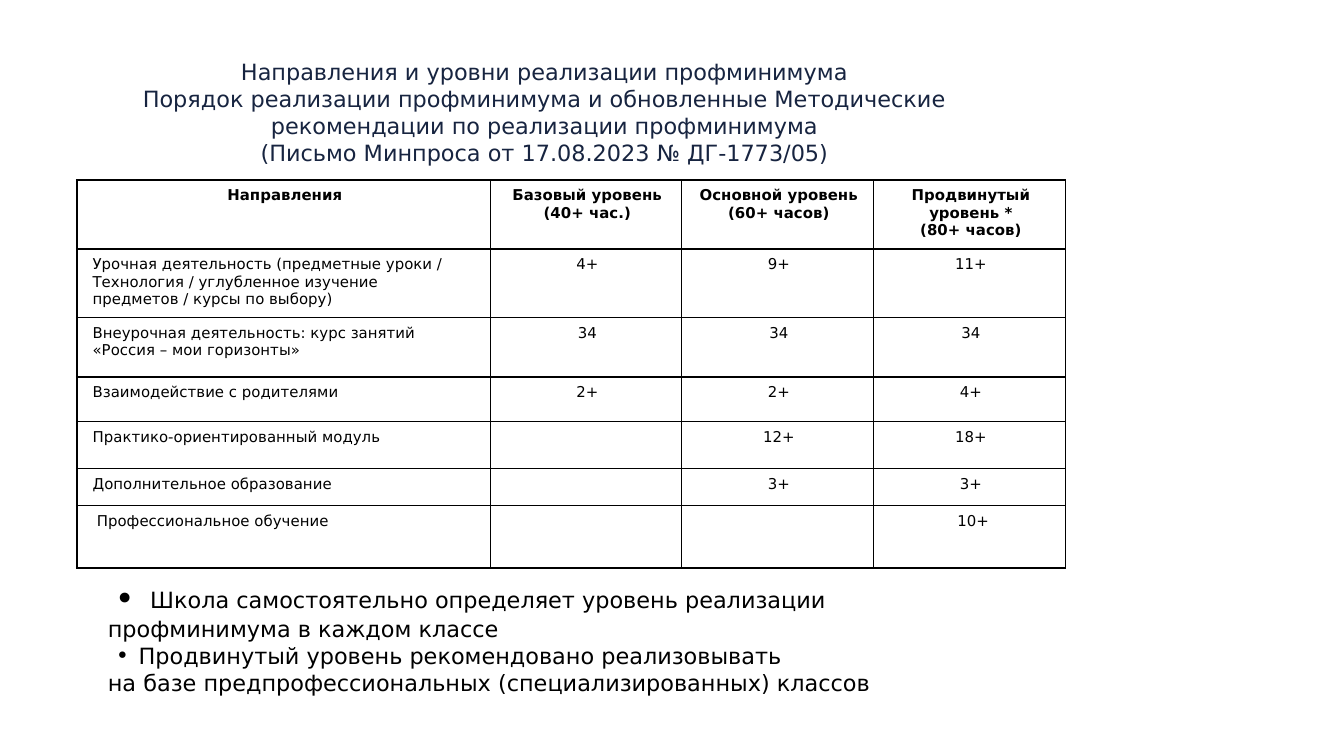
import pptx
import pptx.util
import pptx.dml.color
import pptx.enum.text
import pptx.oxml.ns
from lxml import etree

Cm = pptx.util.Cm
Pt = pptx.util.Pt
qn = pptx.oxml.ns.qn
ALIGN = pptx.enum.text.PP_ALIGN
ANCHOR = pptx.enum.text.MSO_ANCHOR

FONT = "DejaVu Sans"
COLORS = {"title": "172440", "text": "000000", "border": "000000"}

TITLE = [
    "Направления и уровни реализации профминимума",
    "Порядок реализации профминимума и обновленные Методические рекомендации по реализации профминимума",
    "(Письмо Минпроса от 17.08.2023 № ДГ-1773/05)",
]
HEADER = [
    ["Направления"],
    ["Базовый уровень", "(40+ час.)"],
    ["Основной уровень", "(60+ часов)"],
    ["Продвинутый уровень *", "(80+ часов)"],
]
ROWS = [
    ("Урочная деятельность (предметные уроки / Технология / углубленное изучение предметов / курсы по выбору)",
     "4+", "9+", "11+"),
    ("Внеурочная деятельность: курс занятий «Россия – мои горизонты»", "34", "34", "34"),
    ("Взаимодействие с родителями", "2+", "2+", "4+"),
    ("Практико-ориентированный модуль", "", "12+", "18+"),
    ("Дополнительное образование", "", "3+", "3+"),
    ("Профессиональное обучение", "", "", "10+"),
]
COL_WIDTHS = [7.82, 3.61, 3.63, 3.63]
ROW_HEIGHTS = [1.3, 1.3, 1.12, 0.84, 0.89, 0.7, 1.18]
NOTES = [
    ("Школа самостоятельно определяет уровень реализации",
     dict(margin=1.26, indent=-0.67, bullet=150)),
    ("профминимума в каждом классе", dict(margin=0.46, before=1.4)),
    ("Продвинутый уровень рекомендовано реализовывать",
     dict(margin=1.04, indent=-0.43, bullet=100)),
    ("на базе предпрофессиональных (специализированных) классов", dict(margin=0.46)),
]


def write(p, text, size=12, color="text", bold=False, align=ALIGN.LEFT,
          margin=0, indent=0, bullet=None, before=0):
    p.alignment = align
    p.space_before = Pt(before)
    pPr = p._p.get_or_add_pPr()
    pPr.set("marL", str(Cm(margin)))
    pPr.set("indent", str(Cm(indent)))
    if bullet:
        etree.SubElement(pPr, qn("a:buSzPct"), val=str(bullet * 1000))
        etree.SubElement(pPr, qn("a:buFont"), typeface=FONT)
        etree.SubElement(pPr, qn("a:buChar"), char="•")
    else:
        etree.SubElement(pPr, qn("a:buNone"))
    if not text:
        etree.SubElement(p._p, qn("a:endParaRPr"), sz=str(size * 100))
        return
    for i, line in enumerate(text.split("\n")):
        if i:
            p.add_line_break()
        r = p.add_run()
        r.text = line
        r.font.name = FONT
        r.font.size = Pt(size)
        r.font.bold = bold
        r.font.color.rgb = pptx.dml.color.RGBColor.from_string(COLORS[color])


def paragraph(tf, index):
    return tf.add_paragraph() if index else tf.paragraphs[0]


def add_borders(cell):
    tcPr = cell._tc.get_or_add_tcPr()
    for i, side in enumerate(("lnL", "lnR", "lnT", "lnB")):
        ln = etree.Element(qn("a:" + side), w=str(Pt(1)))
        fill = etree.SubElement(ln, qn("a:solidFill"))
        etree.SubElement(fill, qn("a:srgbClr"), val=COLORS["border"])
        tcPr.insert(i, ln)


def add_title(s):
    sp = s.shapes.title
    sp.left, sp.top, sp.width, sp.height = Cm(2.18), Cm(0.97), Cm(16.23), Cm(2.03)
    tf = sp.text_frame
    tf.auto_size = pptx.enum.text.MSO_AUTO_SIZE.NONE
    tf.vertical_anchor = ANCHOR.TOP
    write(tf.paragraphs[0], "\n".join(TITLE), color="title", align=ALIGN.CENTER)


def add_levels_table(s):
    data = [HEADER] + [[[value] for value in row] for row in ROWS]
    table = s.shapes.add_table(len(data), len(COL_WIDTHS), Cm(1.45), Cm(3.4),
                               Cm(sum(COL_WIDTHS)), Cm(sum(ROW_HEIGHTS))).table
    for column, width in zip(table.columns, COL_WIDTHS):
        column.width = Cm(width)
    for row, height in zip(table.rows, ROW_HEIGHTS):
        row.height = Cm(height)
    for i, row in enumerate(data):
        for j, lines in enumerate(row):
            cell = table.cell(i, j)
            cell.fill.background()
            add_borders(cell)
            cell.margin_left, cell.margin_right = Cm(0.3), Cm(0.25)
            cell.margin_top = cell.margin_bottom = Cm(0.13)
            for k, line in enumerate(lines):
                write(paragraph(cell.text_frame, k), line, size=8, bold=i == 0,
                      align=ALIGN.CENTER if i == 0 or j else ALIGN.LEFT,
                      indent=0.08 if i == len(ROWS) else 0)


def add_notes(s):
    sp = s.shapes.add_textbox(Cm(1.4), Cm(10.77), Cm(18.72), Cm(2.49))
    tf = sp.text_frame
    tf.word_wrap = True
    tf.margin_left = tf.margin_right = Cm(0.18)
    tf.margin_top, tf.margin_bottom = Cm(0.3), Cm(0.1)
    for i, (text, style) in enumerate(NOTES):
        write(paragraph(tf, i), text, **style)


def main():
    prs = pptx.Presentation()
    prs.slide_width, prs.slide_height = Cm(25.4), Cm(14.28)
    s = prs.slides.add_slide(prs.slide_layouts[5])
    add_title(s)
    add_levels_table(s)
    add_notes(s)
    prs.save("out.pptx")


if __name__ == "__main__":
    main()
